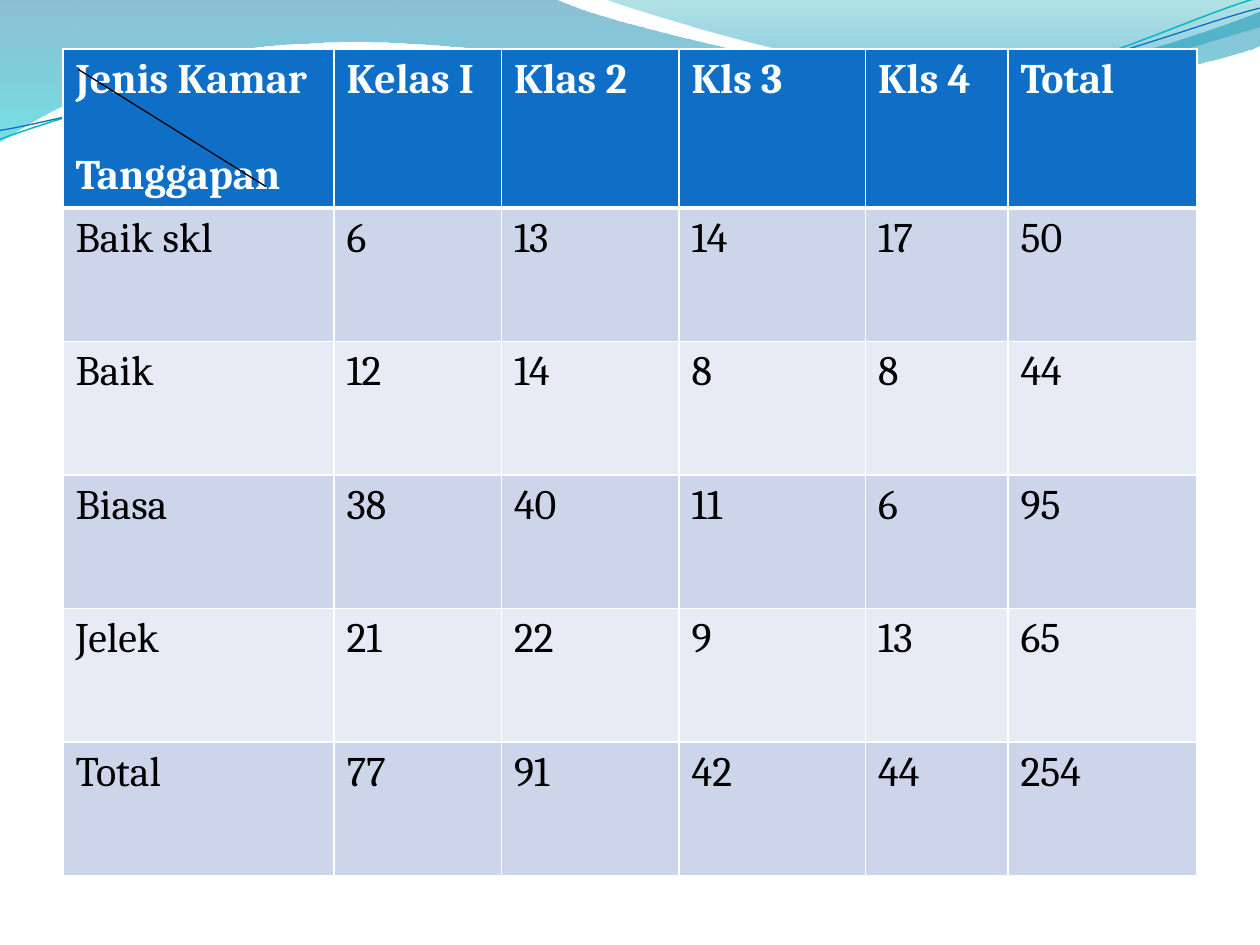
from lxml.etree import SubElement as Sub
from pptx import Presentation
from pptx.dml.color import RGBColor as Rgb
from pptx.enum.shapes import MSO_CONNECTOR as Conn
from pptx.oxml.ns import qn
from pptx.util import Inches, Pt

HUES = {
    "head": "0F6FC6", "odd": "CCD5EA", "even": "E7EBF5",
    "white": "FFFFFF", "black": "000000", "teal": "0AB8BF",
    "deep": "0074A1", "cyan": "00C6CF", "sea": "00A1A9", "sky": "008BBF",
}
FONT = "Cambria"
TILT = 357.3

BANDS = [
    ([[(0, 0)],
      [(4.4, -0.01)],
      [(4.76, 0.17), (6.64, 0.63), (7.58, 0.63)],
      [(8.53, 0.63), (9.58, 0.26), (10, 0.09)],
      [(10.01, 0.36)],
      [(9.83, 0.44), (8.7, 0.76), (7.46, 0.75)],
      [(6.22, 0.75), (3.82, 0.28), (2.57, 0.34)],
      [(1.29, 0.36), (0.46, 0.83), (-0.01, 1.13)],
      [(0, 0)]],
     [(0, "deep", 45), (1, "cyan", 55)]),
    ([[(4.79, -0.01)],
      [(5.09, 0.11), (6.82, 0.62), (7.69, 0.65)],
      [(8.56, 0.69), (9.61, 0.32), (10, 0.21)],
      [(10, 0)],
      [(4.79, -0.01)]],
     [(0, "sea", 30), (0.8, "sky", 45)]),
]
CURVES = [
    ([[(-0.02, 0.87)],
      [(0.47, 0.72), (1.58, 0.41), (2.78, 0.42)],
      [(3.96, 0.42), (5.91, 0.93), (7.12, 0.9)],
      [(8.32, 0.87), (9.4, 0.36), (10, 0.22)]], "teal", 0.85),
    ([[(-0.02, 0.8)],
      [(0.46, 0.75), (1.64, 0.45), (2.83, 0.46)],
      [(4.03, 0.46), (5.96, 0.88), (7.16, 0.85)],
      [(8.35, 0.83), (9.42, 0.42), (10.02, 0.3)]], "head", 0.75),
]

COLS = [2.15, 1.33, 1.41, 1.48, 1.13, 1.5]
ROWS = [1.26] + [1.06] * 5
DATA = [
    ["Jenis Kamar\nTanggapan", "Kelas I", "Klas 2", "Kls 3", "Kls 4", "Total"],
    ["Baik skl", "6", "13", "14", "17", "50"],
    ["Baik", "12", "14", "8", "8", "44"],
    ["Biasa", "38", "40", "11", "6", "95"],
    ["Jelek", "21", "22", "9", "13", "65"],
    ["Total", "77", "91", "42", "44", "254"],
]


def hue(name):
    return Rgb.from_string(HUES[name])


def outline(slide, left, top, route, close):
    dots = [(left + Inches(x), top + Inches(y)) for leg in route for x, y in leg]
    pen = slide.shapes.build_freeform(*dots[0])
    pen.add_line_segments(dots[1:], close=close)
    shape = pen.convert_to_shape()
    shape.shadow.inherit = False
    lines = iter(list(shape._element.iter(qn("a:lnTo"))))
    for leg in route[1:]:
        first, *rest = [next(lines) for _ in leg]
        if rest:
            first.tag = qn("a:cubicBezTo")
            for line in rest:
                first.append(line[0])
                line.getparent().remove(line)
    return shape


def add_waves(slide, left, top):
    for route, stops in BANDS:
        band = outline(slide, left, top, route, True)
        band.line.fill.background()
        band.fill.gradient()
        band.fill.gradient_angle = 270
        for stop, (place, name, _) in zip(band.fill.gradient_stops, stops):
            stop.position = place
            stop.color.rgb = hue(name)
        tones = band._element.spPr.iter(qn("a:srgbClr"))
        for tone, (_, _, alpha) in zip(tones, stops):
            Sub(tone, qn("a:alpha"), val=str(alpha * 1000))
    for route, name, width in CURVES:
        curve = outline(slide, left, top, route, False)
        curve.rotation = TILT
        curve.fill.background()
        curve.line.color.rgb = hue(name)
        curve.line.width = Pt(width)


def add_edges(cell, row):
    widths = {"L": 1, "R": 1, "T": 3 if row == 1 else 1, "B": 3 if row == 0 else 1}
    props = cell._tc.get_or_add_tcPr()
    for side, width in widths.items():
        edge = Sub(props, qn(f"a:ln{side}"), w=str(Pt(width)))
        Sub(Sub(edge, qn("a:solidFill")), qn("a:srgbClr"), val=HUES["white"])


def add_cell(cell, text, row):
    add_edges(cell, row)
    cell.fill.solid()
    cell.fill.fore_color.rgb = hue("head" if row == 0 else "odd" if row % 2 else "even")
    cell.text = text
    for i, para in enumerate(cell.text_frame.paragraphs):
        para.font.name = FONT
        para.font.size = Pt(24)
        para.font.bold = row == 0
        para.font.color.rgb = hue("black" if row else "white")
        if i:
            para.space_before = Pt(27.5)


def add_grid(slide, left, top, width, height):
    table = slide.shapes.add_table(
        len(ROWS), len(COLS), left, top, width, height).table
    for col, size in zip(table.columns, COLS):
        col.width = int(width * size / sum(COLS))
    for row, size in zip(table.rows, ROWS):
        row.height = int(height * size / sum(ROWS))
    for r, texts in enumerate(DATA):
        for c, text in enumerate(texts):
            add_cell(table.cell(r, c), text, r)
    slash = slide.shapes.add_connector(
        Conn.STRAIGHT, left + Inches(0.12), top + Inches(0.16),
        left + Inches(1.61), top + Inches(1.09))
    slash.line.color.rgb = hue("black")
    slash.line.width = Pt(0.75)
    Sub(slash._element.spPr, qn("a:effectLst"))


def main():
    deck = Presentation()
    deck.slide_width = Inches(10)
    deck.slide_height = Inches(7.5)
    slide = deck.slides.add_slide(deck.slide_layouts[6])
    add_waves(slide, Inches(0), Inches(0))
    add_grid(slide, Inches(0.5), Inches(0.39), Inches(9), Inches(6.56))
    deck.save("out.pptx")


if __name__ == "__main__":
    main()
